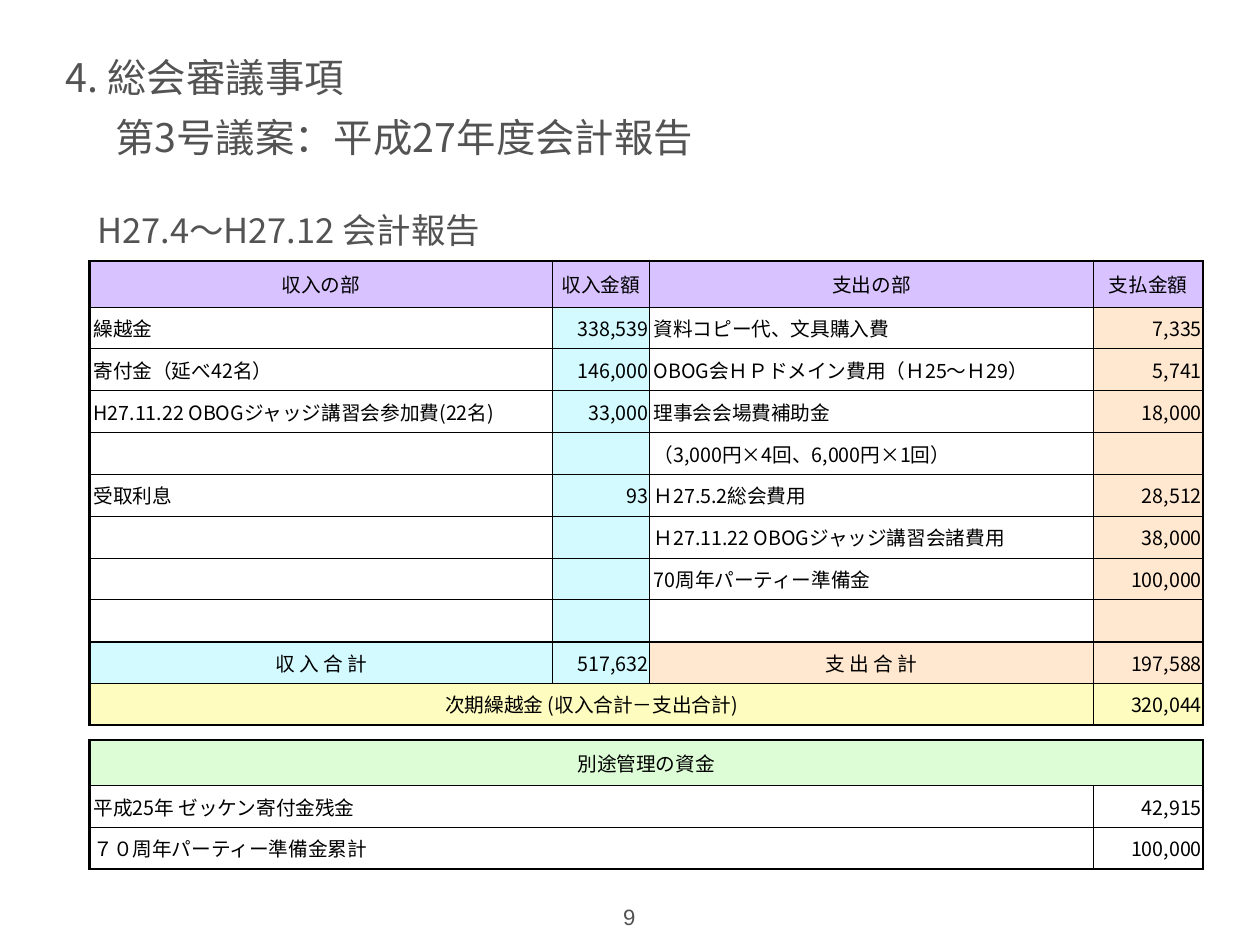
"""Build the fiscal 2015 accounting report slide with its two ledgers."""
from lxml import etree
from pptx import Presentation, util as u
from pptx.dml.color import RGBColor
from pptx.enum import text
from pptx.oxml.ns import qn

PX = 10160
GRAY = RGBColor(0x53, 0x53, 0x53)
BLACK = RGBColor(0, 0, 0)
WHITE = RGBColor(0xFF, 0xFF, 0xFF)
PURPLE = RGBColor(0xD8, 0xC2, 0xFF)
CYAN = RGBColor(0xD2, 0xFA, 0xFF)
ORANGE = RGBColor(0xFF, 0xE8, 0xCF)
YELLOW = RGBColor(0xFE, 0xFC, 0xBF)
GREEN = RGBColor(0xDD, 0xFD, 0xD6)
JAPANESE = "Noto Sans CJK JP"
LEFT, CENTER, RIGHT = text.PP_ALIGN.LEFT, text.PP_ALIGN.CENTER, text.PP_ALIGN.RIGHT


def set_font(paragraph, size, color, name=JAPANESE):
    paragraph.font.size = u.Pt(size)
    paragraph.font.color.rgb = color
    paragraph.font.name = name
    defaults = paragraph._p.pPr.find(qn("a:defRPr"))
    etree.SubElement(defaults, qn("a:ea"), typeface=name)


def set_borders(cell, widths):
    for side, width in zip("LRTB", widths):
        line = etree.SubElement(cell._tc.get_or_add_tcPr(), qn(f"a:ln{side}"), w=str(u.Pt(width)))
        paint = etree.SubElement(line, qn("a:solidFill"))
        etree.SubElement(paint, qn("a:srgbClr"), val=str(BLACK))


prs = Presentation()
prs.slide_width, prs.slide_height = 1280 * PX, 960 * PX
slide = prs.slides.add_slide(prs.slide_layouts[6])

headings = [
    ("4. 総会審議事項", (62, 50, 1017, 55), 32, JAPANESE, LEFT),
    ("第3号議案：平成27年度会計報告", (112, 111, 1017, 55), 32, JAPANESE, LEFT),
    ("H27.4〜H27.12 会計報告", (94, 200, 759, 67), 28, JAPANESE, LEFT),
    ("9", (628, 913, 22, 35), 18, "Arial", CENTER),
]
for wording, place, size, font_name, align in headings:
    frame = slide.shapes.add_textbox(*(n * PX for n in place)).text_frame
    frame.word_wrap = align == LEFT
    frame.vertical_anchor = text.MSO_ANCHOR.MIDDLE if align == LEFT else text.MSO_ANCHOR.TOP
    frame.margin_left = frame.margin_right = frame.margin_top = frame.margin_bottom = 5 * PX
    heading = frame.paragraphs[0]
    heading.text = wording
    heading.alignment = align
    set_font(heading, size, GRAY, font_name)

entry_fills = [WHITE, CYAN, WHITE, ORANGE]
accounts = [
    ("収入の部", "収入金額", "支出の部", "支払金額"),
    ("繰越金", "338,539", "資料コピー代、文具購入費", "7,335"),
    ("寄付金（延べ42名）", "146,000", "OBOG会ＨＰドメイン費用（Ｈ25～Ｈ29）", "5,741"),
    ("H27.11.22 OBOGジャッジ講習会参加費(22名)", "33,000", "理事会会場費補助金", "18,000"),
    ("", "", "（3,000円×4回、6,000円×1回）", ""),
    ("受取利息", "93", "Ｈ27.5.2総会費用", "28,512"),
    ("", "", "Ｈ27.11.22 OBOGジャッジ講習会諸費用", "38,000"),
    ("", "", "70周年パーティー準備金", "100,000"),
    ("", "", "", ""),
    ("収 入 合 計", "517,632", "支 出 合 計", "197,588"),
    ("次期繰越金 (収入合計－支出合計)", None, None, "320,044"),
]
account_fills = [[PURPLE] * 4, *[entry_fills] * 8, [CYAN, CYAN, ORANGE, ORANGE], [YELLOW] * 4]
reserves = [
    ("別途管理の資金", None, None, None),
    ("平成25年 ゼッケン寄付金残金", None, None, "42,915"),
    ("７０周年パーティー準備金累計", None, None, "100,000"),
]
reserve_fills = [[GREEN] * 4, [WHITE] * 4, [WHITE] * 4]

ledgers = [
    (accounts, account_fills, 265, 47, 425, {0, 9, 10}, {0, 9, 11}),
    (reserves, reserve_fills, 752, 46, 85, {0}, {0, 3}),
]
column_widths = [470, 99, 451, 111]
for entries, fills, top, header_height, body_height, centered_rows, thick_edges in ledgers:
    ledger = slide.shapes.add_table(
        len(entries), 4, 91 * PX, top * PX,
        sum(column_widths) * PX, (header_height + body_height) * PX).table
    ledger.first_row = ledger.horz_banding = False
    for column, width in zip(ledger.columns, column_widths):
        column.width = width * PX
    for r, entry in enumerate(entries):
        ledger.rows[r].height = body_height * PX // (len(entries) - 1) if r else header_height * PX
        if None in entry:
            ledger.cell(r, 0).merge(ledger.cell(r, entry.count(None)))
        for c, wording in enumerate(entry):
            cell = ledger.cell(r, c)
            is_outer = [c == 0, c + cell.span_width == 4, r in thick_edges, r + 1 in thick_edges]
            set_borders(cell, [2 if outer else 1 for outer in is_outer])
            cell.fill.solid()
            cell.fill.fore_color.rgb = fills[r][c]
            cell.vertical_anchor = text.MSO_ANCHOR.MIDDLE
            cell.margin_left = cell.margin_right = cell.margin_top = cell.margin_bottom = PX
            line = cell.text_frame.paragraphs[0]
            if wording:
                line.text = wording
            is_amount = c % 2 == 1 and (r > 0 or entries is reserves)
            line.alignment = RIGHT if is_amount else CENTER if r in centered_rows else LEFT
            if line.alignment == LEFT:
                line._p.get_or_add_pPr().set("indent", str(3 * PX))
            set_font(line, 16, BLACK)

prs.save("out.pptx")
